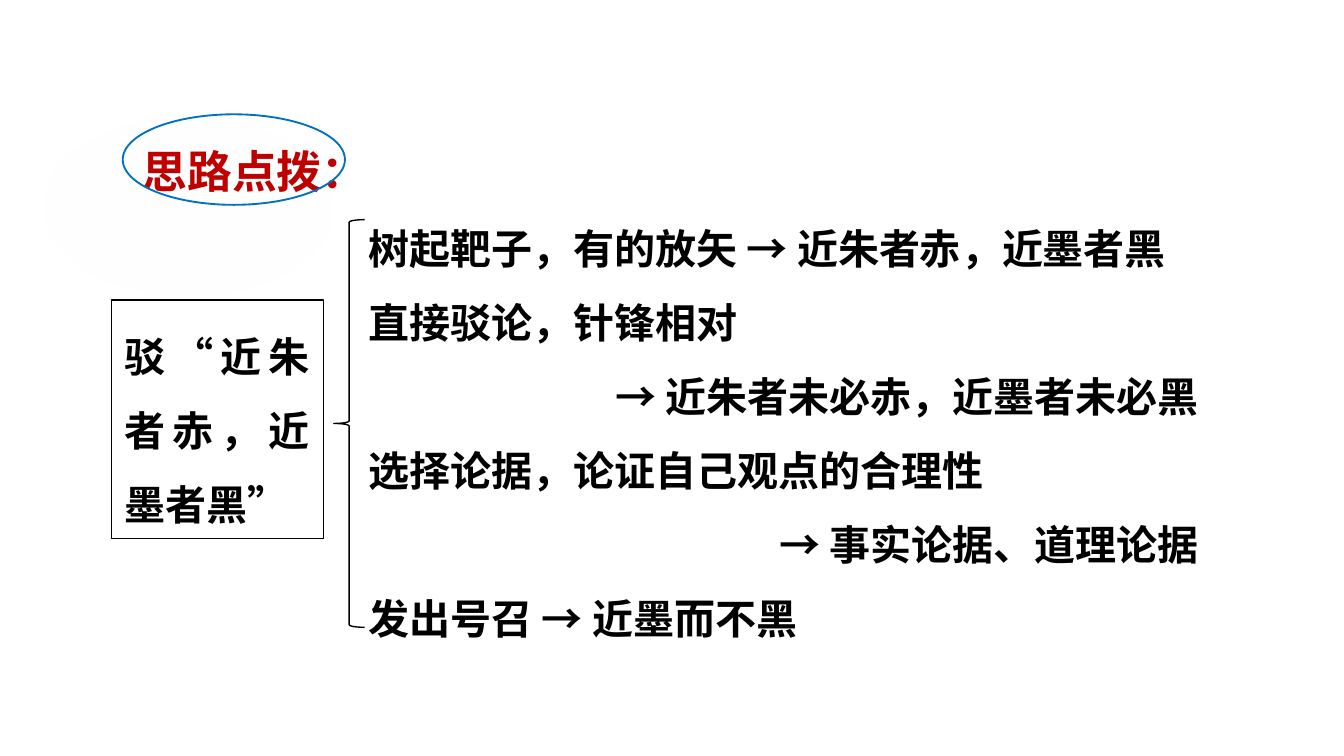
import pptx
import pptx.dml.color
import pptx.enum.shapes
import pptx.enum.text
import pptx.oxml
import pptx.oxml.ns
import pptx.util
import lxml.etree

Cm = pptx.util.Cm
Pt = pptx.util.Pt
Shape = pptx.enum.shapes.MSO_SHAPE
Align = pptx.enum.text.PP_ALIGN

RED = pptx.dml.color.RGBColor(0xC0, 0x00, 0x00)
BLUE = pptx.dml.color.RGBColor(0x00, 0x70, 0xC0)
BLACK = pptx.dml.color.RGBColor(0x00, 0x00, 0x00)
CHINESE_FONT = "Noto Sans CJK SC"


def write_lines(box, lines, size, color):
    frame = box.text_frame
    frame_format = {
        "word_wrap": True,
        "auto_size": pptx.enum.text.MSO_AUTO_SIZE.NONE,
        "vertical_anchor": pptx.enum.text.MSO_ANCHOR.TOP,
    }
    for name, value in frame_format.items():
        setattr(frame, name, value)
    for index, (text, align, font_name) in enumerate(lines):
        para = frame.add_paragraph() if index else frame.paragraphs[0]
        properties = para._p.get_or_add_pPr()
        properties.set("marL", "0")
        properties.set("indent", "0")
        lxml.etree.SubElement(properties, pptx.oxml.ns.qn("a:buNone"))
        para_format = {"alignment": align, "line_spacing": 1.5, "space_before": Pt(0)}
        for name, value in para_format.items():
            setattr(para, name, value)
        span = para.add_run()
        span.text = text
        font_format = {"size": Pt(size), "bold": True, "name": font_name}
        for name, value in font_format.items():
            setattr(span.font, name, value)
        span.font.color.rgb = color
        east_asian = lxml.etree.SubElement(span._r.get_or_add_rPr(), pptx.oxml.ns.qn("a:ea"))
        east_asian.set("typeface", CHINESE_FONT)


def add_outline(kind, left, top, width, height, color, weight):
    shape = slide.shapes.add_shape(kind, Cm(left), Cm(top), Cm(width), Cm(height))
    shape.shadow.inherit = False
    shape.fill.background()
    shape.line.color.rgb = color
    shape.line.width = Pt(weight)
    return shape


deck = pptx.Presentation()
deck.slide_width = Cm(25.4)
deck.slide_height = Cm(14.28)
slide = deck.slides.add_slide(deck.slide_layouts[1])

title = slide.shapes.title
body = slide.placeholders[1]
positions = [
    (title, (2.44, 2.08, 7.67, 1.8)),
    (body, (6.71, 3.63, 16.2, 8.71)),
]
for placeholder, position in positions:
    for name, value in zip(("left", "top", "width", "height"), position):
        setattr(placeholder, name, Cm(value))

write_lines(title, [("思路点拨：", Align.JUSTIFY, CHINESE_FONT)], 24, RED)
steps = [
    ("树起靶子，有的放矢 → 近朱者赤，近墨者黑", Align.JUSTIFY, "Times New Roman"),
    ("直接驳论，针锋相对", Align.JUSTIFY, "Arial"),
    ("→ 近朱者未必赤，近墨者未必黑", Align.RIGHT, "Arial"),
    ("选择论据，论证自己观点的合理性", Align.JUSTIFY, "Times New Roman"),
    ("→ 事实论据、道理论据", Align.RIGHT, "Times New Roman"),
    ("发出号召 → 近墨而不黑", Align.JUSTIFY, "Times New Roman"),
]
write_lines(body, steps, 22, BLACK)

title_ring = add_outline(Shape.OVAL, 2.32, 2.16, 4.2, 1.71, BLUE, 1)
effects = title_ring._element.spPr.find(pptx.oxml.ns.qn("a:effectLst"))
effects.append(pptx.oxml.parse_xml(
    f'<a:outerShdw {pptx.oxml.ns.nsdecls("a")} blurRad="{Pt(50)}" dist="{Pt(35)}" '
    'dir="8100000" algn="tr" rotWithShape="0">'
    '<a:srgbClr val="000000"><a:alpha val="20000"/></a:srgbClr></a:outerShdw>'
))

claim_box = add_outline(Shape.RECTANGLE, 2.11, 5.67, 4, 4.5, BLACK, 0.75)
write_lines(claim_box, [("驳“近朱者赤，近墨者黑”", Align.JUSTIFY, CHINESE_FONT)], 22, BLACK)

add_outline(Shape.LEFT_BRACE, 6.31, 4.15, 0.58, 7.7, BLACK, 0.75)

deck.save("out.pptx")
